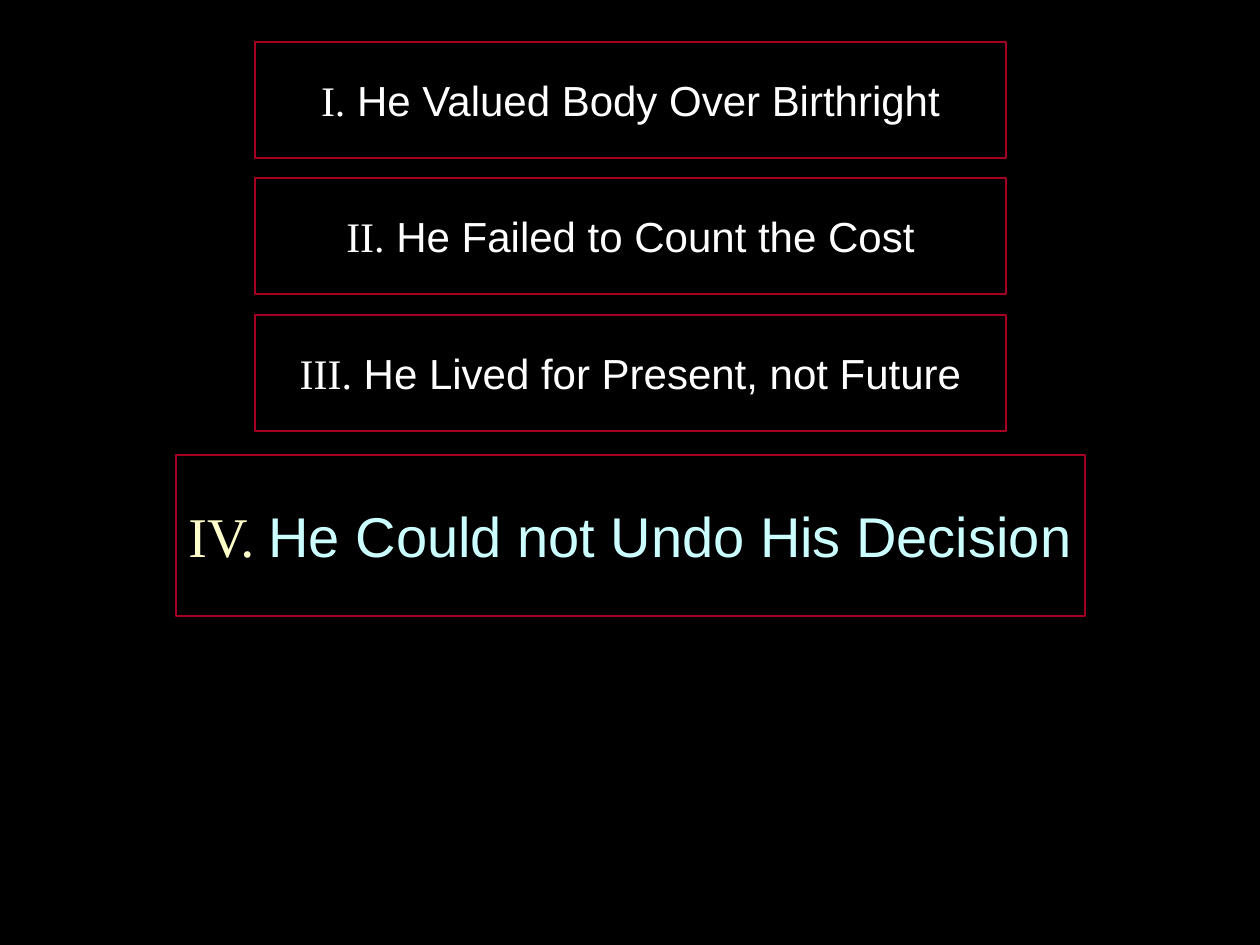
from pptx import Presentation
from pptx.dml.color import RGBColor
from pptx.enum.shapes import MSO_SHAPE
from pptx.enum.text import MSO_ANCHOR, PP_ALIGN
from pptx.util import Emu, Pt

PX_PER_INCH = 126
EARLIER_POINTS = [
    ("I.", " He Valued Body Over Birthright"),
    ("II.", " He Failed to Count the Cost"),
    ("III.", " He Lived for Present, not Future"),
]


def px(length):
    return Emu(round(length * 914400 / PX_PER_INCH))


def color(value):
    return RGBColor.from_string(value)


def add_span(para, text, font_name, font_color):
    span = para.add_run()
    span.text = text
    span.font.name = font_name
    span.font.color.rgb = color(font_color)


def add_point(page, frame, numeral, title, size, numeral_color, title_color):
    box = page.shapes.add_shape(MSO_SHAPE.RECTANGLE, *map(px, frame))
    box.shadow.inherit = False
    box.fill.background()
    box.line.color.rgb = color("A50021")
    box.line.width = Pt(0.75)
    box.text_frame.word_wrap = True
    box.text_frame.vertical_anchor = MSO_ANCHOR.MIDDLE
    para = box.text_frame.paragraphs[0]
    para.alignment = PP_ALIGN.CENTER
    para.space_before = Pt(size * 0.2)
    para.font.size = Pt(size)
    add_span(para, numeral, "Times New Roman", numeral_color)
    add_span(para, title, "Arial", title_color)


def main():
    deck = Presentation()
    deck.slide_width, deck.slide_height = px(1260), px(945)
    page = deck.slides.add_slide(deck.slide_layouts[6])
    page.background.fill.solid()
    page.background.fill.fore_color.rgb = color("000000")

    for row, (numeral, title) in enumerate(EARLIER_POINTS):
        frame = (255, 42 + row * 273 // 2, 751, 116)
        add_point(page, frame, numeral, title, 24, "FFFFFF", "FFFFFF")
    add_point(page, (176, 455, 909, 161), "IV. ", "He Could not Undo His Decision",
              32, "FFFFCC", "CCFFFF")

    deck.save("out.pptx")


if __name__ == "__main__":
    main()
